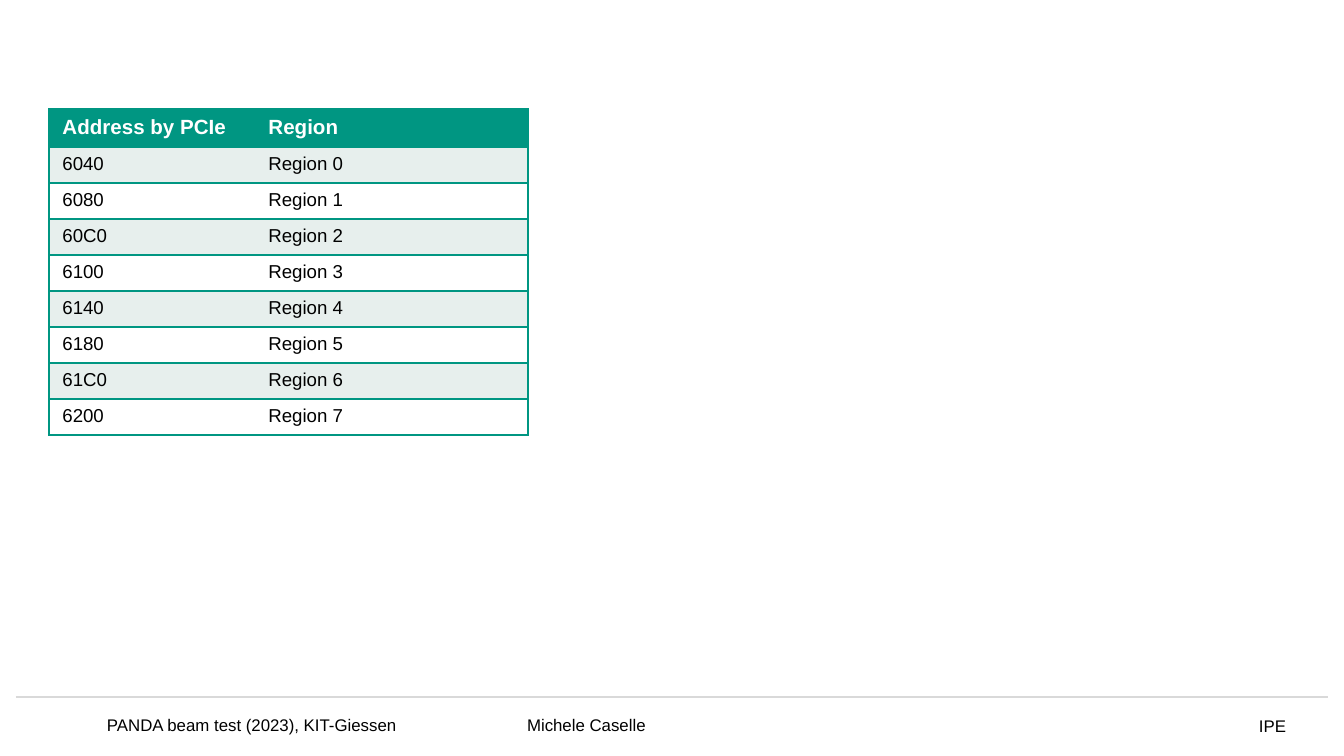
import dataclasses

import lxml.etree
import pptx
import pptx.dml.color
import pptx.enum.shapes
import pptx.enum.text
import pptx.oxml.ns
import pptx.util

PX = 914400 / 134.4
ALIGN = pptx.enum.text.PP_ALIGN
ANCHOR = pptx.enum.text.MSO_ANCHOR


@dataclasses.dataclass(frozen=True)
class Theme:
    font: str = "Arial"
    green: str = "009682"
    band: str = "E7EFED"
    white: str = "FFFFFF"
    black: str = "000000"
    rule: str = "D9D9D9"
    line: int = 1
    header: int = 11
    body: int = 10
    footer: int = 9


T = Theme()


def px(n):
    return pptx.util.Emu(round(n * PX))


def rgb(value):
    return pptx.dml.color.RGBColor.from_string(value)


def sub(parent, tag, **attrs):
    return lxml.etree.SubElement(parent, pptx.oxml.ns.qn(tag), **attrs)


def write(tf, text, size=T.body, color=T.black, bold=False, align=ALIGN.LEFT, tab=None):
    p = tf.paragraphs[0]
    p.alignment = align
    if tab is not None:
        tabs = sub(p._p.get_or_add_pPr(), "a:tabLst")
        sub(tabs, "a:tab", pos=str(px(tab)), algn="l")
    r = p.add_run()
    r.text = text
    r.font.name = T.font
    r.font.size = pptx.util.Pt(size)
    r.font.bold = bold
    r.font.color.rgb = rgb(color)


def add_text(s, box, text, margins=(13, 7), anchor=ANCHOR.TOP, **fmt):
    tf = s.shapes.add_textbox(*map(px, box)).text_frame
    tf.word_wrap = True
    tf.vertical_anchor = anchor
    tf.margin_left = tf.margin_right = px(margins[0])
    tf.margin_top = tf.margin_bottom = px(margins[1])
    write(tf, text, **fmt)


def set_borders(cell, sides):
    tcPr = cell._tc.get_or_add_tcPr()
    for side in "LRTB":
        ln = sub(tcPr, f"a:ln{side}", w=str(pptx.util.Pt(T.line)))
        if side in sides:
            sub(sub(ln, "a:solidFill"), "a:srgbClr", val=T.green)
        else:
            sub(ln, "a:noFill")


def add_address_table(s, box, rows, col_widths, header_height):
    left, top, width, height = box
    shape = s.shapes.add_table(len(rows), len(col_widths), *map(px, box))
    table = shape.table
    row_height = (height - header_height) // (len(rows) - 1)
    for column, col_width in zip(table.columns, col_widths):
        column.width = px(col_width)
    for i, row in enumerate(rows):
        table.rows[i].height = px(row_height if i else header_height)
        if i == 0:
            fill, fmt = T.green, dict(size=T.header, color=T.white, bold=True)
        else:
            fill, fmt = (T.band if i % 2 else T.white), {}
        for j, text in enumerate(row):
            cell = table.cell(i, j)
            set_borders(cell, "TB" + ("R" if j else "L"))
            cell.fill.solid()
            cell.fill.fore_color.rgb = rgb(fill)
            write(cell.text_frame, text, **fmt)


def add_footer(s, box):
    left, top, width, height = box
    rule = s.shapes.add_connector(
        pptx.enum.shapes.MSO_CONNECTOR.STRAIGHT,
        px(left), px(top), px(left + width), px(top))
    rule.line.color.rgb = rgb(T.rule)
    rule.line.width = pptx.util.Pt(T.line)
    sub(rule._element.spPr, "a:effectLst")
    add_text(s, (left + 793, top, 477, height), "IPE", margins=(0, 0),
             anchor=ANCHOR.MIDDLE, size=T.footer, align=ALIGN.RIGHT)
    add_text(s, (left + 78, top + 11, 991, 34),
             "PANDA beam test (2023), KIT-Giessen\tMichele Caselle",
             size=T.footer, tab=420)


def main():
    prs = pptx.Presentation()
    prs.slide_width, prs.slide_height = px(1344), px(756)
    s = prs.slides.add_slide(prs.slide_layouts[6])
    add_footer(s, (16, 697, 1312, 58))
    addresses = [f"{0x6040 + 0x40 * n:X}" for n in range(8)]
    rows = [("Address by PCIe", "Region")]
    rows += [(address, f"Region {n}") for n, address in enumerate(addresses)]
    add_address_table(s, (49, 109, 479, 326), rows, (206, 273), 38)
    prs.save("out.pptx")


if __name__ == "__main__":
    main()
